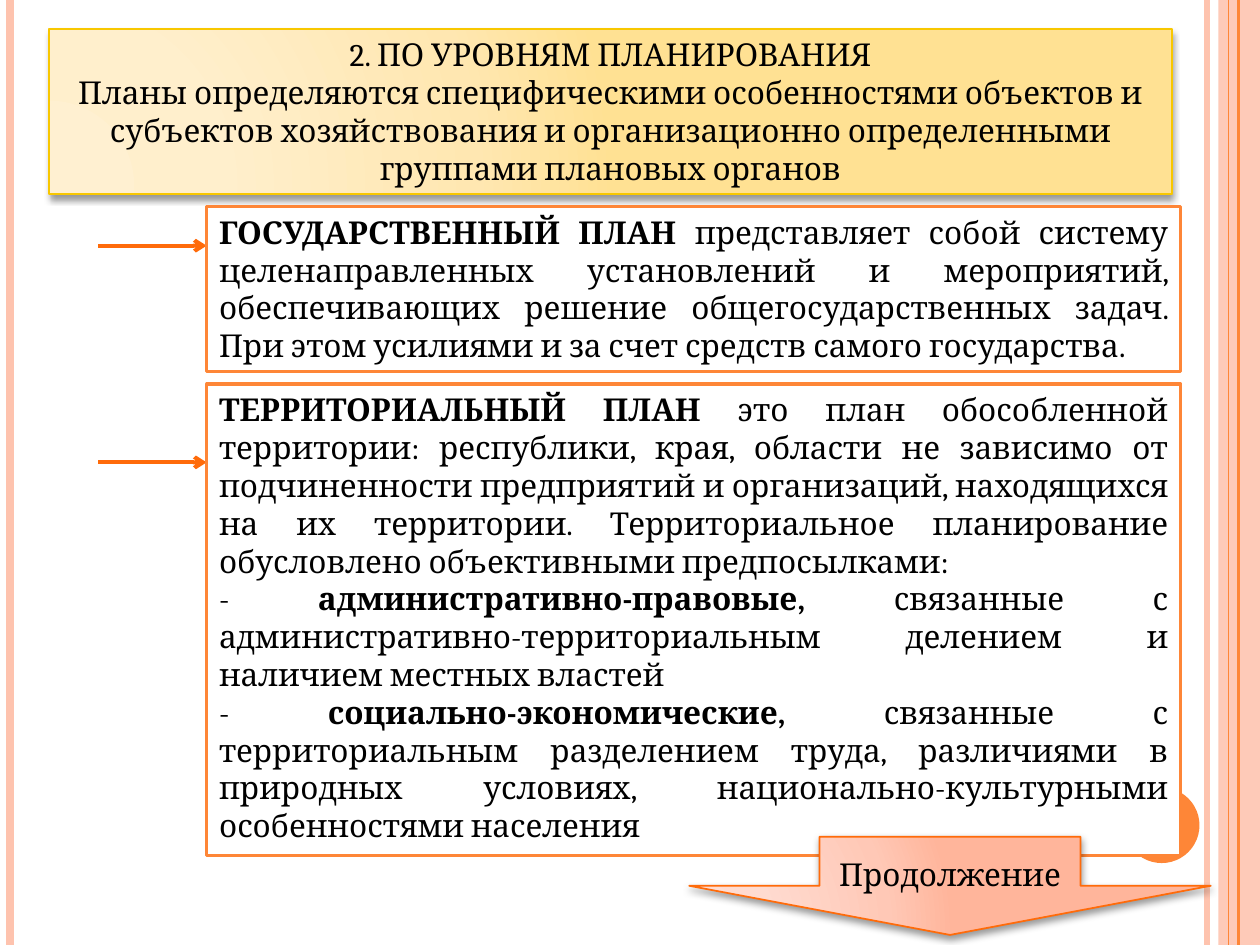
from lxml.etree import SubElement
from pptx import Presentation
from pptx.dml.color import RGBColor
from pptx.enum.shapes import MSO_CONNECTOR as Connector, MSO_SHAPE as Shape
from pptx.enum.text import MSO_ANCHOR as Anchor, PP_ALIGN as Align
from pptx.oxml import parse_xml
from pptx.oxml.ns import nsdecls, qn
from pptx.util import Inches, Pt


def color(value):
    return RGBColor.from_string(value)


def add_box(kind, left, top, width, height, fill, line=None, line_width=1, paragraphs=(),
            align=Align.CENTER, anchor=Anchor.TOP):
    shape = slide.shapes.add_shape(kind, Inches(left), Inches(top), Inches(width), Inches(height))
    shape.shadow.inherit = False
    shape.fill.solid()
    shape.fill.fore_color.rgb = color(fill)
    if line:
        shape.line.color.rgb = color(line)
        shape.line.width = Pt(line_width)
    else:
        shape.line.fill.background()
    frame = shape.text_frame
    frame.word_wrap = True
    frame.vertical_anchor = anchor
    for index, runs in enumerate(paragraphs):
        paragraph = frame.add_paragraph() if index else frame.paragraphs[0]
        paragraph.alignment = align
        paragraph.font.size = Pt(18)
        paragraph.font.name = "Cambria"
        paragraph.font.color.rgb = color("000000")
        for text, bold in runs:
            run = paragraph.add_run()
            run.text = text
            run.font.bold = bold
    return shape


presentation = Presentation()
presentation.slide_width = Inches(10)
presentation.slide_height = Inches(7.5)
slide = presentation.slides.add_slide(presentation.slide_layouts[6])

edge_band = add_box(Shape.RECTANGLE, 9.67, 0, 0.33, 7.5, "FEC3AE")
band_color = edge_band.fill._xPr.find(qn("a:solidFill"))[0]
SubElement(band_color, qn("a:alpha"), val="87000")

lines = [
    (9.58, 0, 9.58, 7.5, "FEC3AE", 3, False),
    (0.08, 0, 0.08, 7.5, "FEC3AE", 4.5, False),
    (9.83, 0, 9.83, 7.5, "FE8637", 1.5, False),
    (9.75, 0, 9.75, 7.5, "FE8637", 0.75, False),
    (0.78, 1.95, 1.64, 1.95, "FF6B0A", 2.25, True),
    (0.78, 3.67, 1.64, 3.67, "FF6B0A", 2.25, True),
]
for x1, y1, x2, y2, line_color, width, has_arrow in lines:
    connector = slide.shapes.add_connector(
        Connector.STRAIGHT, Inches(x1), Inches(y1), Inches(x2), Inches(y2))
    connector.line.color.rgb = color(line_color)
    connector.line.width = Pt(width)
    if has_arrow:
        SubElement(connector.line._get_or_add_ln(), qn("a:tailEnd"), type="arrow")
    SubElement(connector._element.spPr, qn("a:effectLst"))

add_box(Shape.OVAL, 8.92, 6.25, 0.6, 0.6, "FE8637")

heading = add_box(Shape.RECTANGLE, 0.39, 0.23, 8.91, 1.31, "FFE7B1", "F8C700", 1, [
    [("2. ПО УРОВНЯМ ПЛАНИРОВАНИЯ", False)],
    [("Планы определяются специфическими особенностями объектов и субъектов хозяйствования "
      "и организационно определенными группами плановых органов", False)],
])

state_plan = [
    [("ГОСУДАРСТВЕННЫЙ ПЛАН ", True),
     ("представляет собой систему целенаправленных установлений и мероприятий, обеспечивающих "
      "решение общегосударственных задач. При этом усилиями и за счет средств самого "
      "государства.", False)],
]
territorial_plan = [
    [("ТЕРРИТОРИАЛЬНЫЙ ПЛАН ", True),
     ("это план обособленной территории: республики, края, области не зависимо от "
      "подчиненности предприятий и организаций, находящихся на их территории. "
      "Территориальное планирование обусловлено объективными предпосылками:", False)],
    [("- ", False), ("административно-правовые, ", True),
     ("связанные с административно-территориальным делением и наличием местных властей", False)],
    [("- ", False), ("социально-экономические, ", True),
     ("связанные с территориальным разделением труда, различиями в природных условиях, "
      "национально-культурными особенностями населения", False)],
]
for top, height, paragraphs in [(1.64, 1.31, state_plan), (3.05, 3.74, territorial_plan)]:
    add_box(Shape.RECTANGLE, 1.64, top, 7.73, height, "FFFFFF", "FE8637", 2, paragraphs,
            Align.JUSTIFY)

continuation = add_box(Shape.DOWN_ARROW, 5.47, 6.64, 4.14, 0.78, "FFC8B6", "FF6B0A", 1,
                       [[("Продолжение", False)]], anchor=Anchor.MIDDLE)

gradients = [
    (heading, ["FFF0D1", "FFEFCC", "FFE7B1", "FFE193"]),
    (continuation, ["FFDED5", "FFDBD0", "FFC8B6", "FFB59B"]),
]
for shape, stop_colors in gradients:
    stops = "".join(
        f'<a:gs pos="{position}000"><a:srgbClr val="{value}"/></a:gs>'
        for position, value in zip([0, 30, 75, 100], stop_colors))
    properties = shape._element.spPr
    properties.replace(properties.find(qn("a:solidFill")), parse_xml(
        f'<a:gradFill {nsdecls("a")} rotWithShape="1"><a:gsLst>{stops}</a:gsLst>'
        '<a:path path="circle"><a:fillToRect l="5000" t="100000" r="120000" b="10000"/>'
        '</a:path></a:gradFill>'))
    effects = properties.find(qn("a:effectLst"))
    shadow = SubElement(effects, qn("a:outerShdw"), blurRad=str(Pt(4)), dist=str(Pt(2)),
                        dir="5400000", rotWithShape="0")
    shadow_color = SubElement(shadow, qn("a:srgbClr"), val="000000")
    SubElement(shadow_color, qn("a:alpha"), val="40000")

presentation.save("out.pptx")
